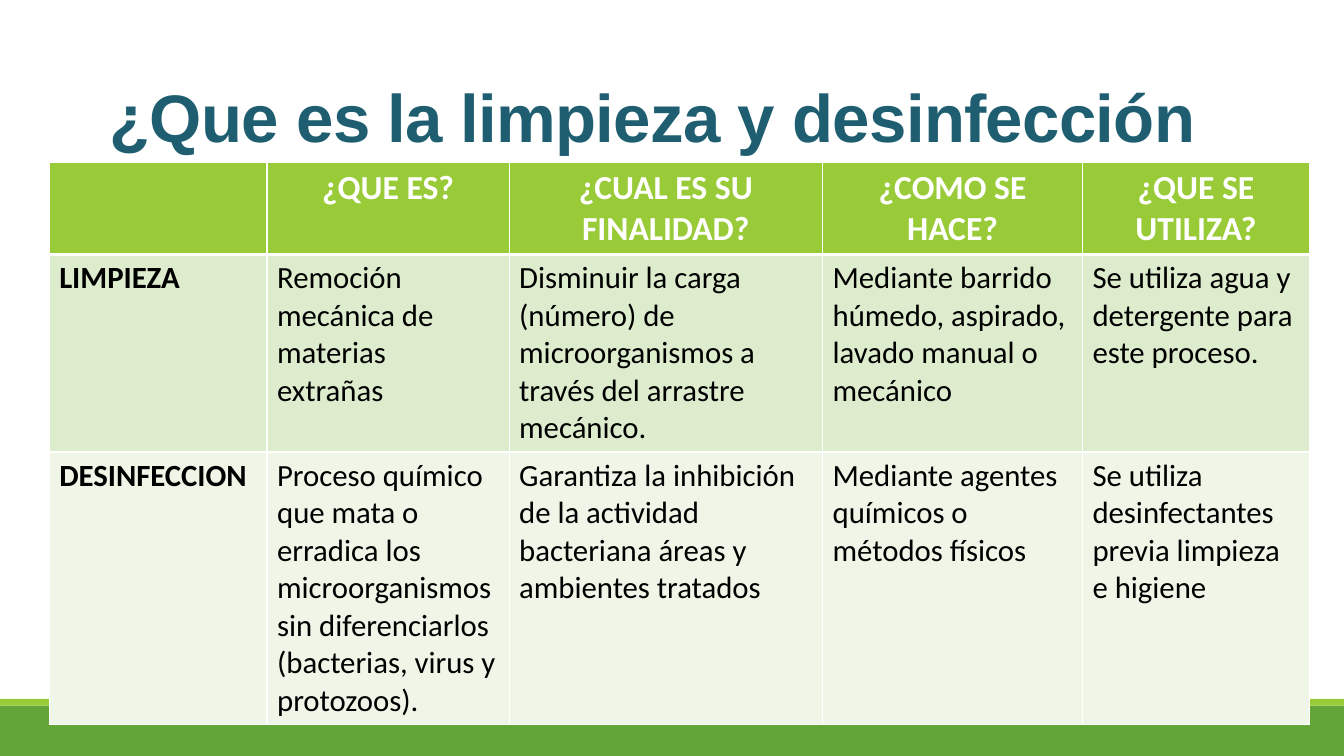
from dataclasses import dataclass

from lxml import etree
from pptx import Presentation
from pptx.dml.color import RGBColor
from pptx.enum.shapes import MSO_SHAPE
from pptx.enum.text import MSO_ANCHOR, MSO_AUTO_SIZE, PP_ALIGN
from pptx.oxml.ns import qn
from pptx.util import Cm, Pt

RECT = MSO_SHAPE.RECTANGLE
BOTTOM = MSO_ANCHOR.BOTTOM
NO_FIT = MSO_AUTO_SIZE.NONE
CENTER, LEFT = PP_ALIGN.CENTER, PP_ALIGN.LEFT

TITLE = "¿Que es la limpieza y desinfección"
ROWS = [
    ["", "¿QUE ES?", "¿CUAL ES SU FINALIDAD?", "¿COMO SE HACE?", "¿QUE SE UTILIZA?"],
    [
        "LIMPIEZA",
        "Remoción mecánica de materias extrañas",
        "Disminuir la carga (número) de microorganismos a través del arrastre mecánico.",
        "Mediante barrido húmedo, aspirado, lavado manual o mecánico",
        "Se utiliza agua y detergente para este proceso.",
    ],
    [
        "DESINFECCION",
        "Proceso químico que mata o erradica los microorganismos sin diferenciarlos "
        "(bacterias, virus y protozoos).",
        "Garantiza la inhibición de la actividad bacteriana áreas y ambientes tratados",
        "Mediante agentes químicos o métodos físicos",
        "Se utiliza desinfectantes previa limpieza e higiene",
    ],
]
COL_WIDTHS = [5.49, 6.1, 7.9, 6.55, 5.72]
ROW_HEIGHTS = [2.29, 4.98, 6.86]
TABLE_LEFT, TABLE_TOP = 1.24, 4.09
SLIDE_W, SLIDE_H = 33.87, 19.05
BAND_H, STRIPE_H = 1.27, 0.17


@dataclass(frozen=True)
class Theme:
    title: str = "1E5E70"
    band: str = "63A537"
    stripe: str = "99CB38"
    row_fills: tuple = ("99CB38", "DEECCE", "EFF6E8")
    white: str = "FFFFFF"
    text: str = "000000"
    title_font: str = "Arial"
    table_font: str = "Calibri"
    title_size: int = 48
    header_size: int = 24
    body_size: int = 22


T = Theme()


def add_run(p, text, font, size, color, bold):
    r = p.add_run()
    r.text = text
    r.font.name = font
    r.font.size = Pt(size)
    r.font.bold = bold
    r.font.color.rgb = RGBColor.from_string(color)
    return r


def add_bar(s, top, height, color):
    sp = s.shapes.add_shape(RECT, 0, Cm(top), Cm(SLIDE_W), Cm(height))
    sp.shadow.inherit = False
    sp.fill.solid()
    sp.fill.fore_color.rgb = RGBColor.from_string(color)
    sp.line.fill.background()


def set_borders(cell, widths):
    tcPr = cell._tc.get_or_add_tcPr()
    for side, width in widths.items():
        ln = etree.SubElement(tcPr, qn(f"a:ln{side}"), w=str(Pt(width)))
        fill = etree.SubElement(ln, qn("a:solidFill"))
        etree.SubElement(fill, qn("a:srgbClr"), val=T.white)


def add_title(s):
    sp = s.shapes.title
    sp.left, sp.top, sp.width, sp.height = Cm(1.57), Cm(1.14), Cm(29.74), Cm(2.92)
    tf = sp.text_frame
    tf.auto_size = NO_FIT
    tf.word_wrap = True
    tf.vertical_anchor = BOTTOM
    p = tf.paragraphs[0]
    p.alignment = CENTER
    p.line_spacing = 0.85
    r = add_run(p, TITLE, T.title_font, T.title_size, T.title, True)
    r.font._element.set("spc", "-50")


def add_comparison(s):
    frame = s.shapes.add_table(
        len(ROWS), len(COL_WIDTHS), Cm(TABLE_LEFT), Cm(TABLE_TOP),
        Cm(sum(COL_WIDTHS)), Cm(sum(ROW_HEIGHTS)),
    )
    table = frame.table
    for col, width in zip(table.columns, COL_WIDTHS):
        col.width = Cm(width)
    for row, height in zip(table.rows, ROW_HEIGHTS):
        row.height = Cm(height)
    for i, texts in enumerate(ROWS):
        header = i == 0
        for j, text in enumerate(texts):
            cell = table.cell(i, j)
            set_borders(cell, {"L": 1, "R": 1, "T": 3 if i == 1 else 1, "B": 3 if header else 1})
            cell.fill.solid()
            cell.fill.fore_color.rgb = RGBColor.from_string(T.row_fills[i])
            p = cell.text_frame.paragraphs[0]
            p.alignment = CENTER if header else LEFT
            if text:
                size = T.header_size if header else T.body_size
                color = T.white if header else T.text
                add_run(p, text, T.table_font, size, color, header or j == 0)


def main():
    prs = Presentation()
    prs.slide_width, prs.slide_height = Cm(SLIDE_W), Cm(SLIDE_H)
    s = prs.slides.add_slide(prs.slide_layouts[5])
    band_top = SLIDE_H - BAND_H
    add_bar(s, band_top, BAND_H, T.band)
    add_bar(s, band_top - STRIPE_H, STRIPE_H, T.stripe)
    add_title(s)
    add_comparison(s)
    prs.save("out.pptx")


if __name__ == "__main__":
    main()
